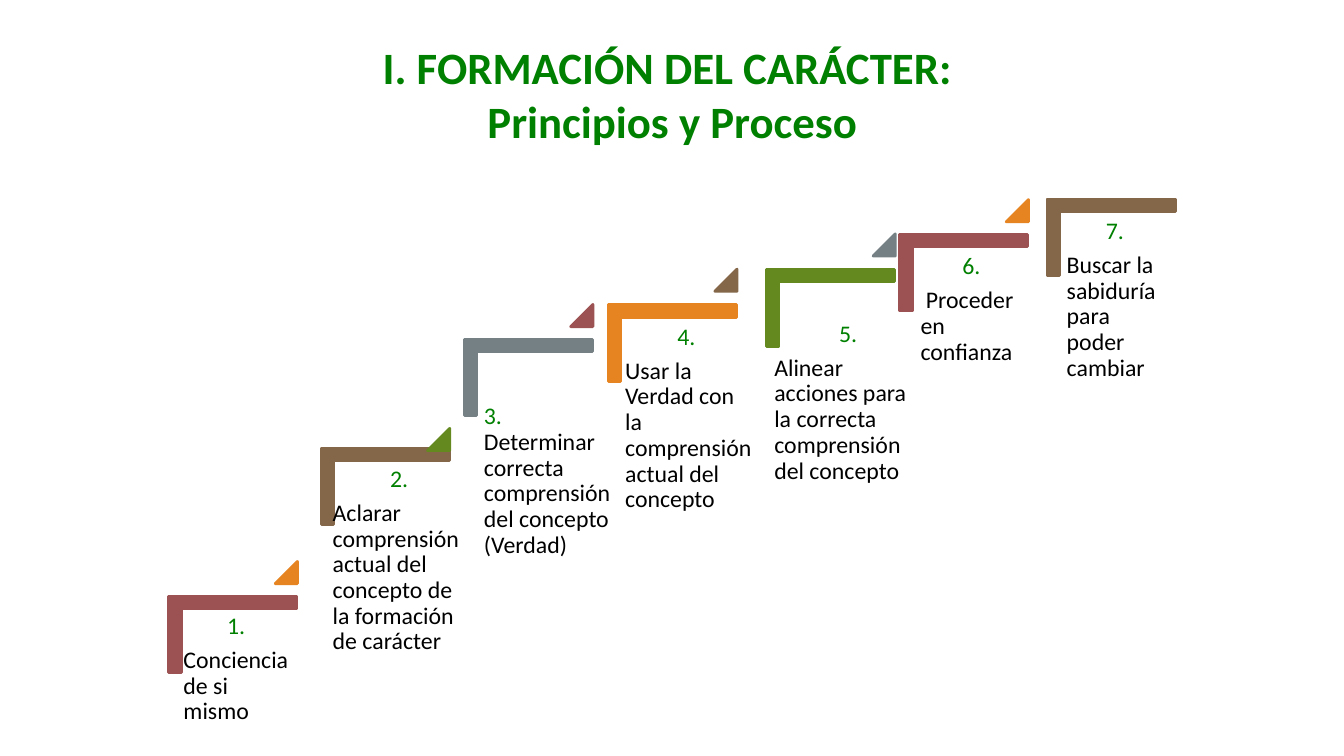
from pptx import Presentation
from pptx import util as u
from pptx.dml.color import RGBColor
from pptx.enum import shapes, text

PX = 9144  # 100 px to the inch
GREEN = RGBColor(0x00, 0x80, 0x00)
BLACK = RGBColor(0x00, 0x00, 0x00)
RED = RGBColor(0x9C, 0x52, 0x52)
ORANGE = RGBColor(0xE6, 0x84, 0x22)
BROWN = RGBColor(0x84, 0x66, 0x48)
OLIVE = RGBColor(0x63, 0x89, 0x1F)
GREY = RGBColor(0x75, 0x80, 0x85)
PALETTE = [RED, ORANGE, BROWN, OLIVE, GREY]

CORNER_W, CORNER_H = 76, 127
ARROW_SIZE, ARROW_DX = 22, 80

# corner (left, top), arrow rise, text box (left, top, width, height), number, wording
STEPS = [
    ((193, 566), 9, (175, 602, 124, 146), "1. ", "Conciencia de si mismo"),
    ((344, 419), -6, (323, 456, 151, 294), "2. ",
     "Aclarar comprensión actual del concepto de la formación de carácter"),
    ((486, 311), 9, (473, 394, 146, 178), "3. ",
     "Determinar correcta comprensión del concepto (Verdad)"),
    ((629, 277), 10, (613, 315, 141, 101), "4. ",
     "Usar la Verdad con la comprensión actual del concepto"),
    ((786, 242), 10, (761, 312, 166, 101), "5. ",
     "Alinear acciones para la correcta comprensión del concepto"),
    ((918, 207), 9, (906, 245, 115, 101), "6.", " Proceder en confianza"),
    ((1064, 172), None, (1051, 210, 115, 101), "7. ",
     "Buscar la sabiduría para poder cambiar"),
]
INLINE_NUMBER = "3. "


def add_mark(kind, place, colour, adjustments):
    mark = page.shapes.add_shape(kind, *(v * PX for v in place))
    mark.shadow.inherit = False
    mark.fill.solid()
    mark.fill.fore_color.rgb = colour
    mark.line.color.rgb = colour
    mark.line.width = u.Pt(2)
    for index, value in enumerate(adjustments):
        mark.adjustments[index] = value
    return mark


def add_span(para, wording, colour, size, bold=False):
    span = para.add_run()
    span.text = wording
    for name, value in {"name": "Calibri", "size": u.Pt(size), "bold": bold}.items():
        setattr(span.font, name, value)
    span.font.color.rgb = colour


deck = Presentation()
deck.slide_width, deck.slide_height = u.Inches(13.33), u.Inches(7.5)
page = deck.slides.add_slide(deck.slide_layouts[5])

title = page.shapes.title
title.left, title.top, title.width, title.height = (v * PX for v in (167, 30, 1000, 125))
title.text_frame.vertical_anchor = text.MSO_ANCHOR.MIDDLE
heading = title.text_frame.paragraphs[0]
heading.alignment = text.PP_ALIGN.CENTER
add_span(heading, "I. FORMACIÓN DEL CARÁCTER: ", GREEN, 32, True)
heading.add_line_break()
add_span(heading, "Principios y Proceso", GREEN, 32, True)

for step, ((left, top), rise, place, number, wording) in enumerate(STEPS):
    corner = add_mark(shapes.MSO_SHAPE.CORNER, (left, top, CORNER_W, CORNER_H),
                      PALETTE[2 * step % 5], (0.16, 0.16))
    corner.rotation = 90

    box = page.shapes.add_textbox(*(v * PX for v in place))
    frame = box.text_frame
    frame.word_wrap = True
    for side in ("left", "top", "right", "bottom"):
        setattr(frame, "margin_" + side, 7 * PX)
    para = frame.paragraphs[0]
    add_span(para, number, GREEN, 17)
    if number != INLINE_NUMBER:
        para.alignment = text.PP_ALIGN.CENTER
        para = frame.add_paragraph()
    add_span(para, wording, BLACK, 17)
    for para in frame.paragraphs:
        para.line_spacing = 0.9
        para.space_after = u.Pt(6)

    if rise is not None:
        add_mark(shapes.MSO_SHAPE.ISOSCELES_TRIANGLE,
                 (left + ARROW_DX, top - rise, ARROW_SIZE, ARROW_SIZE),
                 PALETTE[(2 * step + 1) % 5], (1,))

deck.save("out.pptx")
